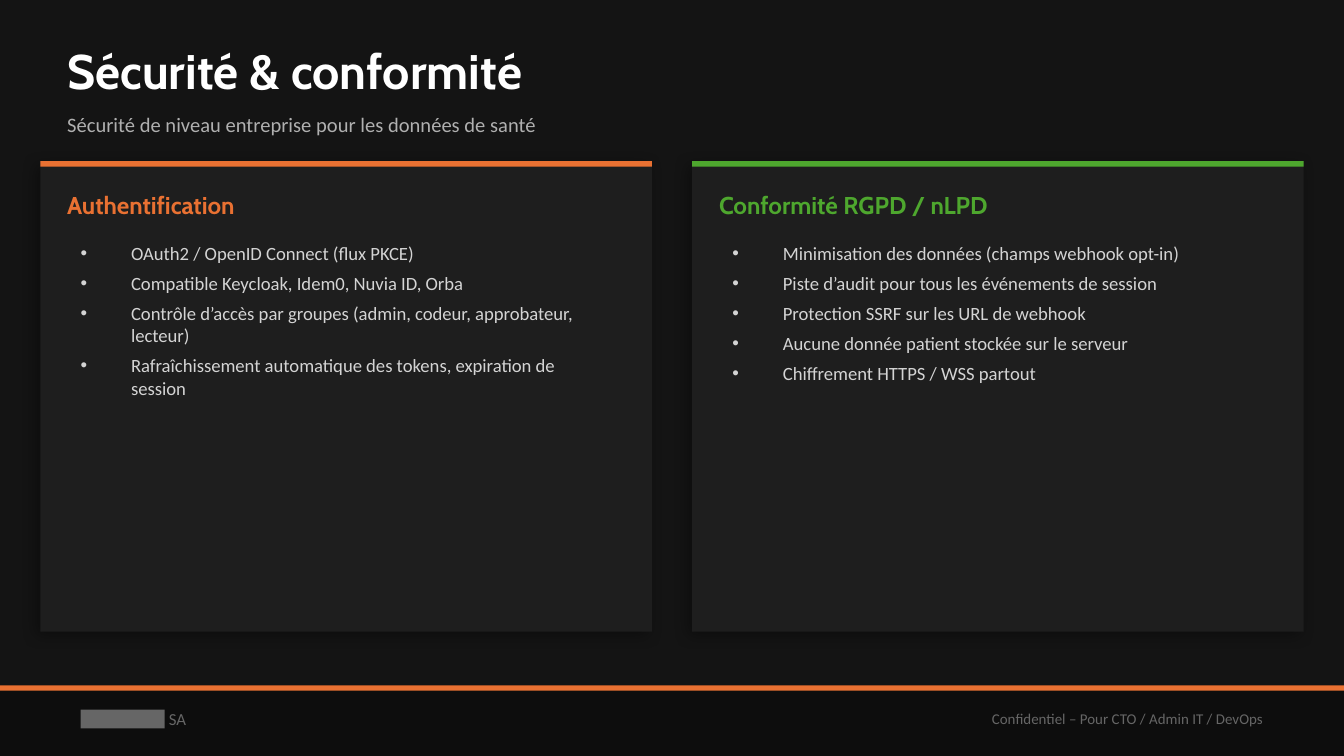
from dataclasses import dataclass

from lxml import etree
from pptx import Presentation, util as u
from pptx.dml.color import RGBColor
from pptx.enum import shapes, text
from pptx.oxml.ns import qn


@dataclass(frozen=True)
class Theme:
    background: str = "141414"
    footer: str = "0D0D0D"
    card: str = "1E1E1E"
    orange: str = "E97132"
    green: str = "4EA72E"
    white: str = "FFFFFF"
    subtitle: str = "B0B0B0"
    body: str = "D4D4D4"
    muted: str = "666666"
    shadow: str = "000000"
    heading_font: str = "Cabin"
    body_font: str = "Calibri"
    title_size: float = 26
    card_size: float = 13
    subtitle_size: float = 11
    list_size: float = 10
    suffix_size: float = 9
    notice_size: float = 8


@dataclass(frozen=True)
class Box:
    left: float
    top: float
    width: float
    height: float


@dataclass(frozen=True)
class Run:
    words: str
    size: float
    color: str
    heading: bool = False


@dataclass(frozen=True)
class Card:
    heading: str
    accent: str
    points: tuple[str, ...]


THEME = Theme()
SLIDE_W, SLIDE_H = 720, 405
FOOTER_TOP = 367.2
BAR_H = 2.88
MARGIN = 36
CARD_LEFT, CARD_TOP, CARD_H = 21.6, 86.4, 252
CARD_GAP = 21.6
CARD_W = (SLIDE_W - 2 * CARD_LEFT - CARD_GAP) / 2
CARD_PAD = 14.4
BULLET_INDENT = 27

CARDS = (
    Card("Authentification", THEME.orange, (
        "OAuth2 / OpenID Connect (flux PKCE)",
        "Compatible Keycloak, Idem0, Nuvia ID, Orba",
        "Contrôle d’accès par groupes (admin, codeur, approbateur, lecteur)",
        "Rafraîchissement automatique des tokens, expiration de session",
    )),
    Card("Conformité RGPD / nLPD", THEME.green, (
        "Minimisation des données (champs webhook opt-in)",
        "Piste d’audit pour tous les événements de session",
        "Protection SSRF sur les URL de webhook",
        "Aucune donnée patient stockée sur le serveur",
        "Chiffrement HTTPS / WSS partout",
    )),
)


def place(item, box: Box) -> None:
    item.left, item.top = u.Pt(box.left), u.Pt(box.top)
    item.width, item.height = u.Pt(box.width), u.Pt(box.height)


def add_panel(slide, box: Box, color: str):
    panel = slide.shapes.add_shape(shapes.MSO_SHAPE.RECTANGLE, 0, 0, 0, 0)
    place(panel, box)
    panel.fill.solid()
    panel.fill.fore_color.rgb = RGBColor.from_string(color)
    panel.line.fill.background()
    panel.shadow.inherit = False
    return panel


def cast_shadow(panel) -> None:
    effects = panel._element.spPr.find(qn("a:effectLst"))
    outer = etree.SubElement(effects, qn("a:outerShdw"), blurRad=str(u.Pt(8)),
                             dist=str(u.Pt(3)), dir=str(135 * 60000),
                             algn="bl", rotWithShape="0")
    color = etree.SubElement(outer, qn("a:srgbClr"), val=THEME.shadow)
    etree.SubElement(color, qn("a:alpha"), val="35000")


def add_run(paragraph, part: Run) -> None:
    run = paragraph.add_run()
    run.text = part.words
    run.font.name = THEME.heading_font if part.heading else THEME.body_font
    run.font.size = u.Pt(part.size)
    run.font.bold = part.heading
    run.font.color.rgb = RGBColor.from_string(part.color)


def setup_frame(frame, inset_x: float, inset_y: float, anchor) -> None:
    frame.word_wrap = True
    frame.auto_size = text.MSO_AUTO_SIZE.NONE
    frame.vertical_anchor = anchor
    frame.margin_left = frame.margin_right = u.Pt(inset_x)
    frame.margin_top = frame.margin_bottom = u.Pt(inset_y)


def write_line(item, box: Box, part: Run, inset: bool = False,
               align=text.PP_ALIGN.LEFT) -> None:
    place(item, box)
    setup_frame(item.text_frame, 7.2 if inset else 0, 3.6 if inset else 0,
                text.MSO_ANCHOR.MIDDLE)
    paragraph = item.text_frame.paragraphs[0]
    paragraph.alignment = align
    add_run(paragraph, part)


def new_label(slide):
    return slide.shapes.add_textbox(0, 0, 0, 0)


def write_list(body, box: Box, points: tuple[str, ...]) -> None:
    place(body, box)
    frame = body.text_frame
    setup_frame(frame, 7.2, 3.6, text.MSO_ANCHOR.TOP)
    for index, point in enumerate(points):
        paragraph = frame.add_paragraph() if index else frame.paragraphs[0]
        props = paragraph._p.get_or_add_pPr()
        props.set("marL", str(u.Pt(BULLET_INDENT)))
        props.set("indent", str(-u.Pt(BULLET_INDENT)))
        etree.SubElement(props, qn("a:buChar"), char="•")
        paragraph.space_before = u.Pt(0)
        paragraph.space_after = u.Pt(4)
        add_run(paragraph, Run(point, THEME.list_size, THEME.body))


def draw_card(slide, card: Card, left: float, body) -> None:
    panel = add_panel(slide, Box(left, CARD_TOP, CARD_W, CARD_H), THEME.card)
    cast_shadow(panel)
    add_panel(slide, Box(left, CARD_TOP, CARD_W, BAR_H), card.accent)
    inner_left, inner_w = left + CARD_PAD, CARD_W - 2 * CARD_PAD
    write_line(new_label(slide), Box(inner_left, 97.2, inner_w, 25.2),
               Run(card.heading, THEME.card_size, card.accent, True))
    write_list(body, Box(inner_left, 126, inner_w, 201.6), card.points)
    slide.shapes._spTree.append(body._element)  # list in front of its panel


def draw_footer(slide) -> None:
    add_panel(slide, Box(0, FOOTER_TOP, SLIDE_W, SLIDE_H - FOOTER_TOP), THEME.footer)
    add_panel(slide, Box(0, FOOTER_TOP, SLIDE_W, BAR_H), THEME.orange)
    # Plain block for the company, followed by its legal form
    add_panel(slide, Box(43.2, 380.2, 45, 10), THEME.muted)
    write_line(new_label(slide), Box(83.4, 370.8, 168.6, 28.8),
               Run("SA", THEME.suffix_size, THEME.muted), inset=True)
    write_line(new_label(slide), Box(396, 370.8, 288, 28.8),
               Run("Confidentiel – Pour CTO / Admin IT / DevOps",
                   THEME.notice_size, THEME.muted),
               inset=True, align=text.PP_ALIGN.RIGHT)


def main() -> None:
    deck = Presentation()
    deck.slide_width, deck.slide_height = u.Pt(SLIDE_W), u.Pt(SLIDE_H)
    slide = deck.slides.add_slide(deck.slide_layouts.get_by_name("Two Content"))
    slide.background.fill.solid()
    slide.background.fill.fore_color.rgb = RGBColor.from_string(THEME.background)
    title, *bodies = slide.placeholders

    draw_footer(slide)

    # Title and subtitle
    text_w = SLIDE_W - 2 * MARGIN
    write_line(title, Box(MARGIN, 18, text_w, 39.6),
               Run("Sécurité & conformité", THEME.title_size, THEME.white, True))
    write_line(new_label(slide), Box(MARGIN, 54, text_w, 25.2),
               Run("Sécurité de niveau entreprise pour les données de santé",
                   THEME.subtitle_size, THEME.subtitle))

    # Two cards side by side
    for index, (card, body) in enumerate(zip(CARDS, bodies)):
        draw_card(slide, card, CARD_LEFT + index * (CARD_W + CARD_GAP), body)

    deck.save("out.pptx")


if __name__ == "__main__":
    main()
